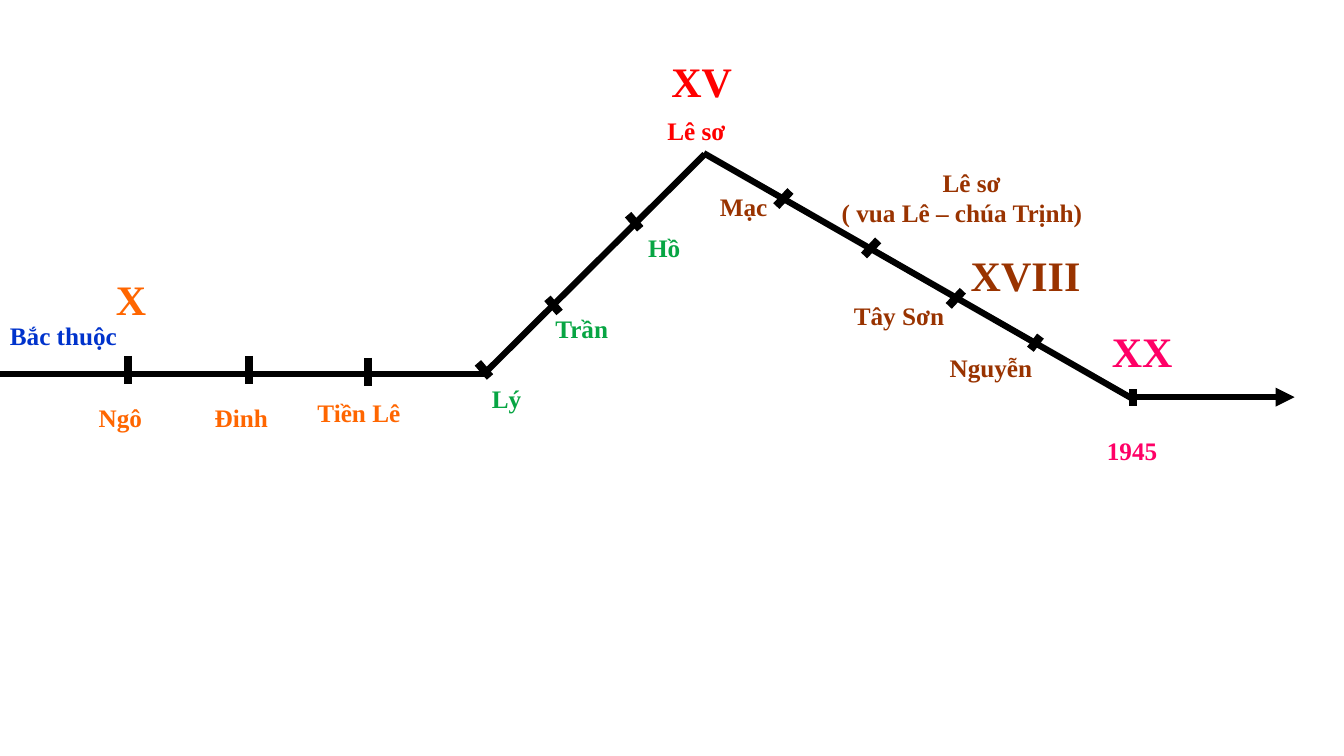
from dataclasses import dataclass

import lxml.etree
import pptx
import pptx.dml.color
import pptx.enum.shapes
import pptx.enum.text
import pptx.oxml.ns
import pptx.slide
import pptx.shapes.connector
import pptx.util

RGBColor = pptx.dml.color.RGBColor
Inches = pptx.util.Inches

BLACK = RGBColor(0x00, 0x00, 0x00)
BLUE = RGBColor(0x00, 0x33, 0xCC)
ORANGE = RGBColor(0xFF, 0x66, 0x00)
GREEN = RGBColor(0x07, 0xA5, 0x43)
RED = RGBColor(0xFF, 0x00, 0x00)
BROWN = RGBColor(0x99, 0x33, 0x00)
PINK = RGBColor(0xFF, 0x00, 0x66)

FONT = "Times New Roman"
DYNASTY_SIZE = 18
CENTURY_SIZE = 30
ROUTE_WIDTH = 4.5
TICK_WIDTH = 6


@dataclass(frozen=True)
class Stretch:
    x1: float
    y1: float
    x2: float
    y2: float
    arrow: bool = False


@dataclass(frozen=True)
class TickGroup:
    dx: float
    dy: float
    centers: tuple[tuple[float, float], ...]


@dataclass(frozen=True)
class Label:
    text: str
    left: float
    top: float
    width: float
    color: RGBColor
    size: int = DYNASTY_SIZE
    height: float = 0.4
    wrap: bool = True
    first_indent: float = 0


STRETCHES = (
    Stretch(0, 3.71, 4.84, 3.71),
    Stretch(4.8, 3.71, 6.99, 1.53),
    Stretch(11.24, 3.94, 12.84, 3.94, arrow=True),
    Stretch(6.98, 1.52, 11.24, 3.96),
)

TICK_GROUPS = (
    TickGroup(0, 0.28, ((1.27, 3.67), (2.47, 3.67), (3.65, 3.69))),
    TickGroup(0.12, 0.14, ((4.8, 3.67), (5.49, 3.03), (6.29, 2.2))),
    TickGroup(0.14, -0.15, ((7.77, 1.97), (8.64, 2.46), (9.48, 2.96))),
    TickGroup(0.1, -0.13, ((10.27, 3.4),)),
    TickGroup(0, -0.17, ((11.24, 3.94),)),
)

LABELS = (
    Label("Bắc thuộc", 0, 3.13, 1.27, BLUE, wrap=False),
    Label("Ngô", 0.88, 3.94, 0.89, ORANGE),
    Label("X", 1.05, 2.66, 0.42, ORANGE, CENTURY_SIZE, 0.6),
    Label("Đinh", 2.03, 3.94, 0.89, ORANGE),
    Label("Tiền Lê", 3.05, 3.89, 1.09, ORANGE),
    Label("Trần", 5.41, 3.06, 0.89, GREEN),
    Label("Hồ", 6.33, 2.26, 0.7, GREEN),
    Label("Lê sơ", 6.52, 1.09, 1.06, RED),
    Label("XV", 6.56, 0.5, 0.83, RED, CENTURY_SIZE, 0.6),
    Label("Lý", 4.78, 3.75, 0.7, GREEN),
    Label("Mạc", 7.04, 1.85, 0.71, BROWN),
    Label("XVIII", 9.53, 2.43, 1.33, BROWN, CENTURY_SIZE, 0.6),
    Label("Lê sơ\n( vua Lê – chúa Trịnh)", 8.25, 1.61, 2.6, BROWN,
          height=0.71, first_indent=1),
    Label("Tây Sơn", 8.37, 2.93, 1.11, BROWN, wrap=False),
    Label("Nguyễn", 9.32, 3.45, 1.03, BROWN, wrap=False),
    Label("1945", 10.88, 4.27, 0.71, PINK, wrap=False),
    Label("XX", 10.93, 3.18, 0.83, PINK, CENTURY_SIZE, 0.6),
)


def draw_line(slide: pptx.slide.Slide, x1: float, y1: float, x2: float, y2: float,
              width: float) -> pptx.shapes.connector.Connector:
    line = slide.shapes.add_connector(
        pptx.enum.shapes.MSO_CONNECTOR.STRAIGHT,
        Inches(x1), Inches(y1), Inches(x2), Inches(y2))
    line.line.color.rgb = BLACK
    line.line.width = pptx.util.Pt(width)
    lxml.etree.SubElement(line._element.spPr, pptx.oxml.ns.qn("a:effectLst"))
    return line


def draw_stretch(slide: pptx.slide.Slide, stretch: Stretch) -> None:
    route = draw_line(slide, stretch.x1, stretch.y1, stretch.x2, stretch.y2, ROUTE_WIDTH)
    if stretch.arrow:
        outline = route.line._get_or_add_ln()
        lxml.etree.SubElement(outline, pptx.oxml.ns.qn("a:tailEnd"), type="triangle")


def draw_ticks(slide: pptx.slide.Slide, group: TickGroup) -> None:
    half_dx, half_dy = group.dx / 2, group.dy / 2
    for x, y in group.centers:
        draw_line(slide, x - half_dx, y - half_dy, x + half_dx, y + half_dy, TICK_WIDTH)


def draw_label(slide: pptx.slide.Slide, label: Label) -> None:
    caption = slide.shapes.add_textbox(
        Inches(label.left), Inches(label.top),
        Inches(label.width), Inches(label.height)).text_frame
    caption.word_wrap = label.wrap
    caption.auto_size = pptx.enum.text.MSO_AUTO_SIZE.SHAPE_TO_FIT_TEXT
    caption.text = label.text
    for paragraph in caption.paragraphs:
        paragraph.font.name = FONT
        paragraph.font.size = pptx.util.Pt(label.size)
        paragraph.font.bold = True
        paragraph.font.color.rgb = label.color
    if label.first_indent:
        properties = caption.paragraphs[0]._p.get_or_add_pPr()
        properties.set("marL", str(Inches(label.first_indent)))


def main() -> None:
    presentation = pptx.Presentation()
    presentation.slide_width = Inches(13.33)
    presentation.slide_height = Inches(7.5)
    slide = presentation.slides.add_slide(presentation.slide_layouts[6])
    for stretch in STRETCHES:
        draw_stretch(slide, stretch)
    for group in TICK_GROUPS:
        draw_ticks(slide, group)
    for label in LABELS:
        draw_label(slide, label)
    presentation.save("out.pptx")


if __name__ == "__main__":
    main()
